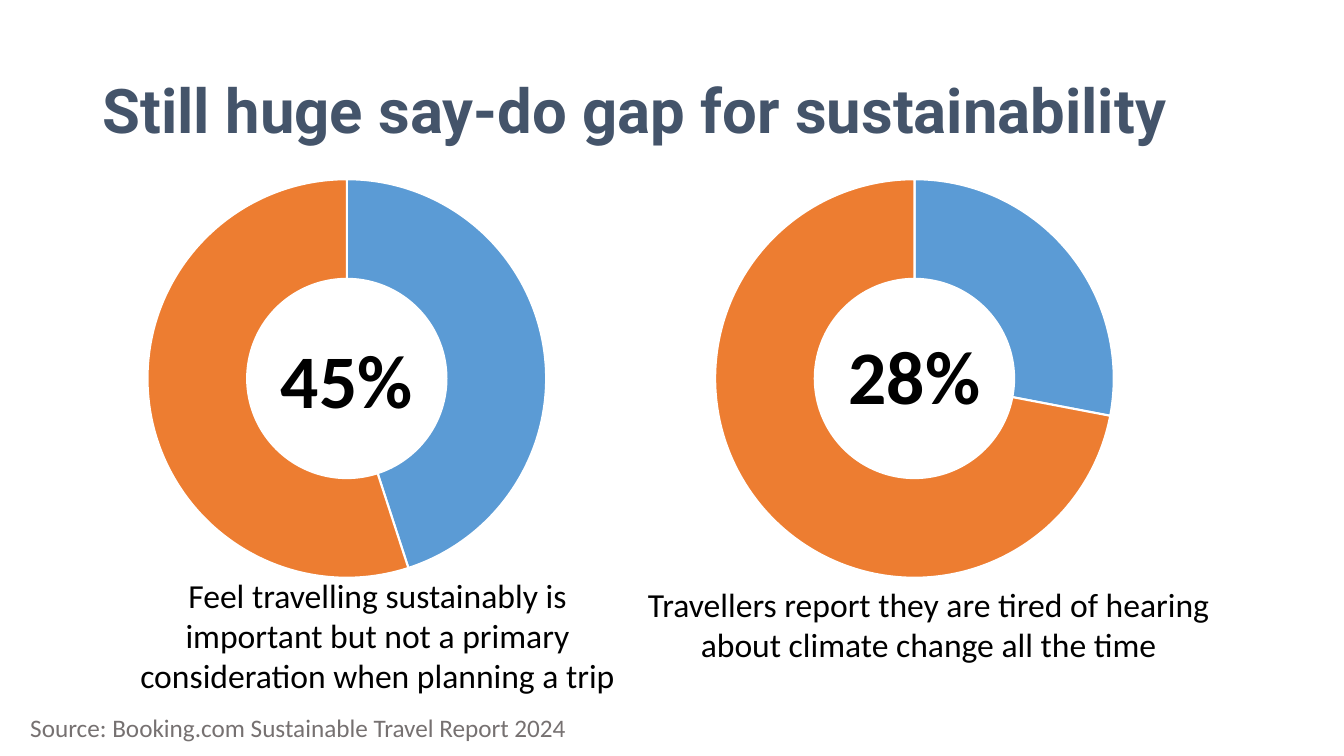
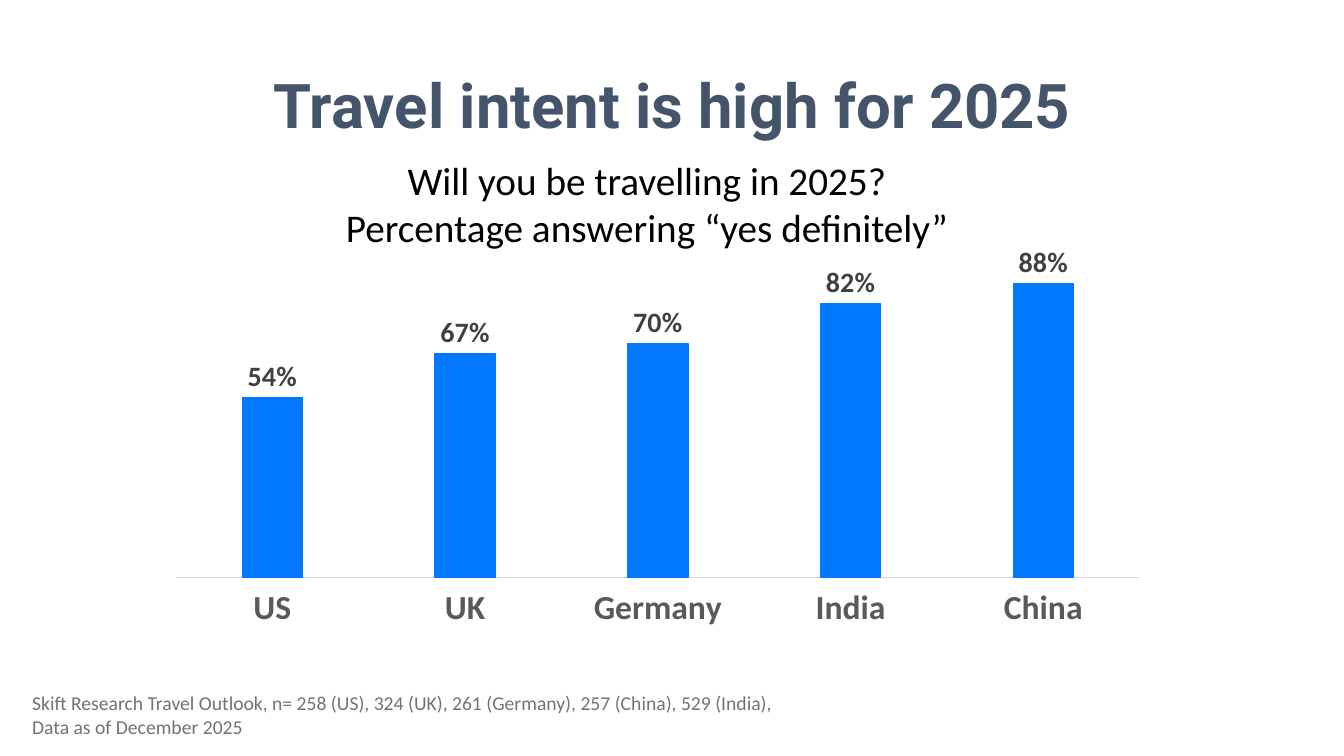
from pptx import Presentation
from pptx.chart.data import CategoryChartData
from pptx.dml.color import RGBColor
from pptx.enum.chart import XL_CHART_TYPE as ChartType
from pptx.enum.chart import XL_LABEL_POSITION as LabelPosition
from pptx.enum.chart import XL_TICK_LABEL_POSITION as TickLabelPosition
from pptx.enum.chart import XL_TICK_MARK as TickMark
from pptx.enum.text import MSO_ANCHOR as Anchor
from pptx.enum.text import MSO_AUTO_SIZE as AutoSize
from pptx.enum.text import PP_ALIGN as Align
from pptx.oxml import parse_xml
from pptx.oxml.ns import nsdecls, qn
from pptx.util import Inches, Pt

COLORS = {
    "title": "44546A",
    "text": "000000",
    "source": "767171",
    "share": "5B9BD5",
    "rest": "ED7D31",
    "bar": "0079FE",
    "bar_label": "404040",
    "category": "595959",
    "axis": "D9D9D9",
    "white": "FFFFFF",
}
BODY_FONT = "Calibri"
TITLE_FONT = "Roboto"


def color(name):
    return RGBColor.from_string(COLORS[name])


def set_font(font, size, color_name="text", bold=False, name=BODY_FONT):
    values = {"size": Pt(size), "bold": bold, "name": name}
    for attribute, value in values.items():
        setattr(font, attribute, value)
    font.color.rgb = color(color_name)


def set_line(line, color_name, width):
    line.color.rgb = color(color_name)
    line.width = Pt(width)


def add_text(slide, box, lines, align=Align.CENTER, anchor=Anchor.TOP,
             spacing=1.0, inset=None, grow=True, **font_values):
    shape = slide.shapes.add_textbox(*map(Inches, box))
    frame = shape.text_frame
    frame_values = {
        "word_wrap": True,
        "auto_size": AutoSize.SHAPE_TO_FIT_TEXT if grow else AutoSize.NONE,
        "vertical_anchor": anchor,
    }
    if inset is not None:
        for side in ("left", "top", "right", "bottom"):
            frame_values[f"margin_{side}"] = Inches(inset)
    for attribute, value in frame_values.items():
        setattr(frame, attribute, value)
    for index, line in enumerate(lines):
        paragraph = frame.add_paragraph() if index else frame.paragraphs[0]
        paragraph.alignment = align
        paragraph.line_spacing = spacing
        run = paragraph.add_run()
        run.text = line
        set_font(run.font, **font_values)


def add_title(slide, text, top, align):
    add_text(slide, (0.92, top, 11.5, 1.45), [text], align, Anchor.MIDDLE,
             spacing=0.9, grow=False, size=44, color_name="title", bold=True,
             name=TITLE_FONT)


def add_source(slide, box, lines, size, inset=None):
    add_text(slide, box, lines, Align.LEFT, inset=inset, size=size,
             color_name="source")


def add_chart(slide, chart_type, box, categories, values, number_format):
    data = CategoryChartData(number_format=number_format)
    data.categories = categories
    data.add_series("Series 1", values)
    chart = slide.shapes.add_chart(
        chart_type, *map(Inches, box), data).chart
    chart.has_legend = False
    chart.has_title = False
    set_font(chart.font, 10)
    return chart


def add_doughnut(slide, left, percent, label_top):
    chart = add_chart(slide, ChartType.DOUGHNUT, (left, 1.64, 4.58, 4.23),
                      ["1", "2"], [percent, 100 - percent], "General")
    plot = chart.plots[0]
    plot.vary_by_categories = True
    for index, name in enumerate(("share", "rest")):
        point_format = plot.series[0].points[index].format
        point_format.fill.solid()
        point_format.fill.fore_color.rgb = color(name)
        set_line(point_format.line, "white", 1.5)
    for hole in chart.element.iter(qn("c:holeSize")):
        hole.set("val", "75")
    add_text(slide, (left + 1.23, label_top, 2.12, 1.01), [f"{percent}%"],
             size=54, bold=True)


def set_plot_area(chart, width, height):
    plot_area = chart.element.find(f".//{qn('c:plotArea')}")
    for layout in plot_area.findall(qn("c:layout")):
        plot_area.remove(layout)
    values = {"layoutTarget": "inner", "xMode": "edge", "yMode": "edge",
              "x": 0, "y": 0, "w": width, "h": height}
    parts = "".join(f'<c:{tag} val="{value}"/>'
                    for tag, value in values.items())
    plot_area.insert(0, parse_xml(
        f"<c:layout {nsdecls('c')}><c:manualLayout>{parts}"
        "</c:manualLayout></c:layout>"))


def add_columns(slide, box, categories, values):
    chart = add_chart(slide, ChartType.COLUMN_CLUSTERED, box,
                      categories, values, "0%")
    set_plot_area(chart, 0.97, 0.86)

    plot = chart.plots[0]
    plot_values = {"gap_width": 219, "overlap": -27,
                   "vary_by_categories": False, "has_data_labels": True}
    for attribute, value in plot_values.items():
        setattr(plot, attribute, value)
    bar_format = plot.series[0].format
    bar_format.fill.solid()
    bar_format.fill.fore_color.rgb = color("bar")
    set_line(bar_format.line, "bar", 0.75)

    labels = plot.data_labels
    label_values = {"show_value": True, "number_format": "0%",
                    "number_format_is_linked": False,
                    "position": LabelPosition.OUTSIDE_END}
    for attribute, value in label_values.items():
        setattr(labels, attribute, value)
    set_font(labels.font, 20, "bar_label", bold=True)

    category_axis = chart.category_axis
    category_axis.major_tick_mark = TickMark.NONE
    category_axis.tick_label_position = TickLabelPosition.LOW
    set_font(category_axis.tick_labels.font, 24, "category", bold=True)
    set_line(category_axis.format.line, "axis", 0.75)

    value_axis = chart.value_axis
    axis_values = {"visible": False, "has_major_gridlines": False,
                   "minimum_scale": 0, "maximum_scale": 1}
    for attribute, value in axis_values.items():
        setattr(value_axis, attribute, value)


def build_gap_slide(slide):
    add_title(slide, "Still huge say-do gap for sustainability", 0.4,
              Align.LEFT)
    add_doughnut(slide, 1.15, 45, 3.25)
    add_doughnut(slide, 6.78, 28, 3.21)
    captions = [
        ((1.06, 5.65, 5.37, 1.31),
         "Feel travelling sustainably is important but not a primary "
         "consideration when planning a trip"),
        ((6.24, 5.74, 5.94, 0.91),
         "Travellers report they are tired of hearing about climate change "
         "all the time"),
    ]
    for box, text in captions:
        add_text(slide, box, [text], size=24)
    add_source(slide, (0.17, 6.94, 11.5, 0.57),
               ["Source: Booking.com Sustainable Travel Report 2024"], 18,
               inset=0.13)


def build_intent_slide(slide):
    add_title(slide, "Travel intent is high for 2025", 0.35, Align.CENTER)
    add_columns(slide, (1.74, 2.42, 9.86, 3.85),
                ["US", "UK", "Germany", "India", "China"],
                [0.54, 0.67, 0.7, 0.82, 0.88])
    add_text(slide, (1.74, 1.5, 9.35, 1.04),
             ["Will you be travelling in 2025?",
              "Percentage answering “yes definitely”"], size=28)
    add_source(slide, (0.22, 6.81, 9.15, 0.57),
               ["Skift Research Travel Outlook, n= 258 (US), 324 (UK), "
                "261 (Germany), 257 (China), 529 (India),",
                "Data as of December 2025"], 14)


def main():
    presentation = Presentation()
    presentation.slide_width = Inches(13.33)
    presentation.slide_height = Inches(7.5)
    blank_layout = presentation.slide_layouts[6]
    for build_slide in (build_gap_slide, build_intent_slide):
        build_slide(presentation.slides.add_slide(blank_layout))
    presentation.save("out.pptx")


if __name__ == "__main__":
    main()
